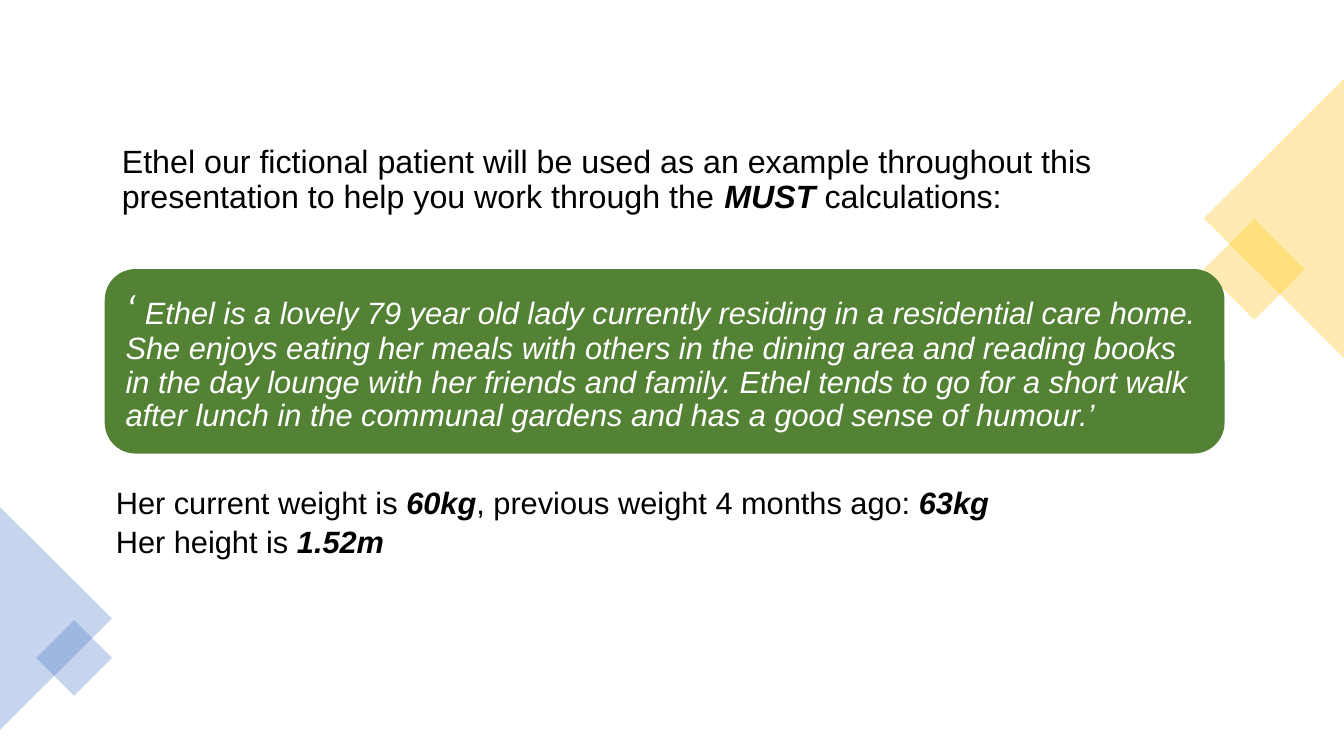
from lxml.etree import SubElement
from pptx import Presentation
from pptx.dml.color import RGBColor
from pptx.enum.shapes import MSO_SHAPE
from pptx.enum.text import MSO_ANCHOR, MSO_AUTO_SIZE, PP_ALIGN
from pptx.oxml.ns import qn
from pptx.util import Cm, Pt

COLOURS = {"text": "000000", "light": "FFFFFF", "card": "548235",
           "yellow": "FFC000", "blue": "4472C4"}
SLIDE_WIDTH, SLIDE_HEIGHT = 33.87, 19.05


def place(item, left, top, width, height):
    item.left, item.top = Cm(left), Cm(top)
    item.width, item.height = Cm(width), Cm(height)


def add_filled(slide, preset, box, colour, opacity=None):
    filled = slide.shapes.add_shape(preset, *(Cm(length) for length in box))
    filled.shadow.inherit = False
    filled.line.fill.background()
    filled.fill.solid()
    filled.fill.fore_color.rgb = RGBColor.from_string(COLOURS[colour])
    if opacity is not None:
        tint = filled.fill._xPr.find(qn("a:solidFill"))[0]
        SubElement(tint, qn("a:alpha")).set("val", str(opacity * 1000))
    return filled


def set_frame(holder, side_inset, anchor):
    frame = holder.text_frame
    frame.word_wrap = True
    frame.auto_size = MSO_AUTO_SIZE.NONE
    frame.vertical_anchor = anchor
    frame.margin_left = frame.margin_right = Cm(side_inset)
    frame.margin_top = frame.margin_bottom = Cm(0.13)
    return frame


def write(paragraph, runs, size, colour="text", space_after=0):
    """Fill a paragraph from (words, bold, italic) tuples."""
    paragraph.alignment = PP_ALIGN.LEFT
    paragraph.line_spacing = 0.9
    paragraph.space_before = Pt(0)
    paragraph.space_after = Pt(space_after)
    for words, bold, italic in runs:
        run = paragraph.add_run()
        run.text = words
        run.font.name, run.font.size = "Arial", Pt(size)
        run.font.bold, run.font.italic = bold, italic
        run.font.color.rgb = RGBColor.from_string(COLOURS[colour])


def with_emphasis(*parts):
    """Make every second part bold italic."""
    return [(words, i % 2 == 1, i % 2 == 1) for i, words in enumerate(parts)]


def add_corner(slide, box, rotation, square_centre, square_side, colour):
    """Draw a sideways triangle filling box, and a tilted square on its edge."""
    left, top, width, height = box
    x, y = left + width / 2, top + height / 2
    triangle_box = (x - height / 2, y - width / 2, height, width)
    triangle = add_filled(slide, MSO_SHAPE.ISOSCELES_TRIANGLE, triangle_box, colour, 30)
    triangle.rotation = rotation
    dx, dy = square_centre
    square_box = (left + dx - square_side / 2, top + dy - square_side / 2,
                  square_side, square_side)
    square = add_filled(slide, MSO_SHAPE.RECTANGLE, square_box, colour, 30)
    square.rotation = 45


def add_intro(slide, box):
    intro = slide.shapes.title
    place(intro, *box)
    frame = set_frame(intro, 0.25, MSO_ANCHOR.TOP)
    write(frame.paragraphs[0], with_emphasis(
        "Ethel our fictional patient will be used as an example throughout this "
        "presentation to help you work through the ", "MUST", " calculations:"), 23)


def add_story_card(slide, box):
    card = add_filled(slide, MSO_SHAPE.ROUNDED_RECTANGLE, box, "card")
    frame = set_frame(card, 0.3, MSO_ANCHOR.MIDDLE)
    story = frame.paragraphs[0]
    write(story, [
        ("‘ ", False, True),
        ("Ethel is a lovely 79 year old lady currently residing in a residential "
         "care home. She enjoys eating her meals with others in the dining area and "
         "reading books in the day lounge with her friends and family. Ethel tends "
         "to go for a short walk after lunch in the communal gardens and has a good "
         "sense of humour.’", False, True)], 22, "light")
    opening_quote = story.runs[0].font
    opening_quote.name, opening_quote.size = "Calibri", Pt(29)


def add_measurements(slide, box):
    measurements = slide.placeholders[1]
    place(measurements, *box)
    frame = set_frame(measurements, 0.25, MSO_ANCHOR.TOP)
    facts = [
        ("Her current weight is ", "60kg", ", previous weight 4 months ago: ", "63kg"),
        ("Her height is ", "1.52m"),
    ]
    for i, fact in enumerate(facts):
        line = frame.add_paragraph() if i else frame.paragraphs[0]
        write(line, with_emphasis(*fact), 22, space_after=4)
        properties = line._p.get_or_add_pPr()
        properties.set("marL", "0")
        properties.set("indent", "0")
        SubElement(properties, qn("a:buNone"))


def main():
    presentation = Presentation()
    presentation.slide_width = Cm(SLIDE_WIDTH)
    presentation.slide_height = Cm(SLIDE_HEIGHT)
    slide = presentation.slides.add_slide(presentation.slide_layouts[1])
    add_corner(slide, (SLIDE_WIDTH - 3.53, 1.98, 3.53, 7.04), 270,
               (1.27, 4.81), 1.8, "yellow")
    add_corner(slide, (0, 12.78, 2.82, 5.61), 90, (1.87, 3.8), 1.35, "blue")
    add_intro(slide, (2.82, 3.55, 27.84, 2))
    add_story_card(slide, (2.64, 6.78, 28.22, 4.65))
    add_measurements(slide, (2.67, 12.17, 28.19, 2.4))
    presentation.save("out.pptx")


if __name__ == "__main__":
    main()
